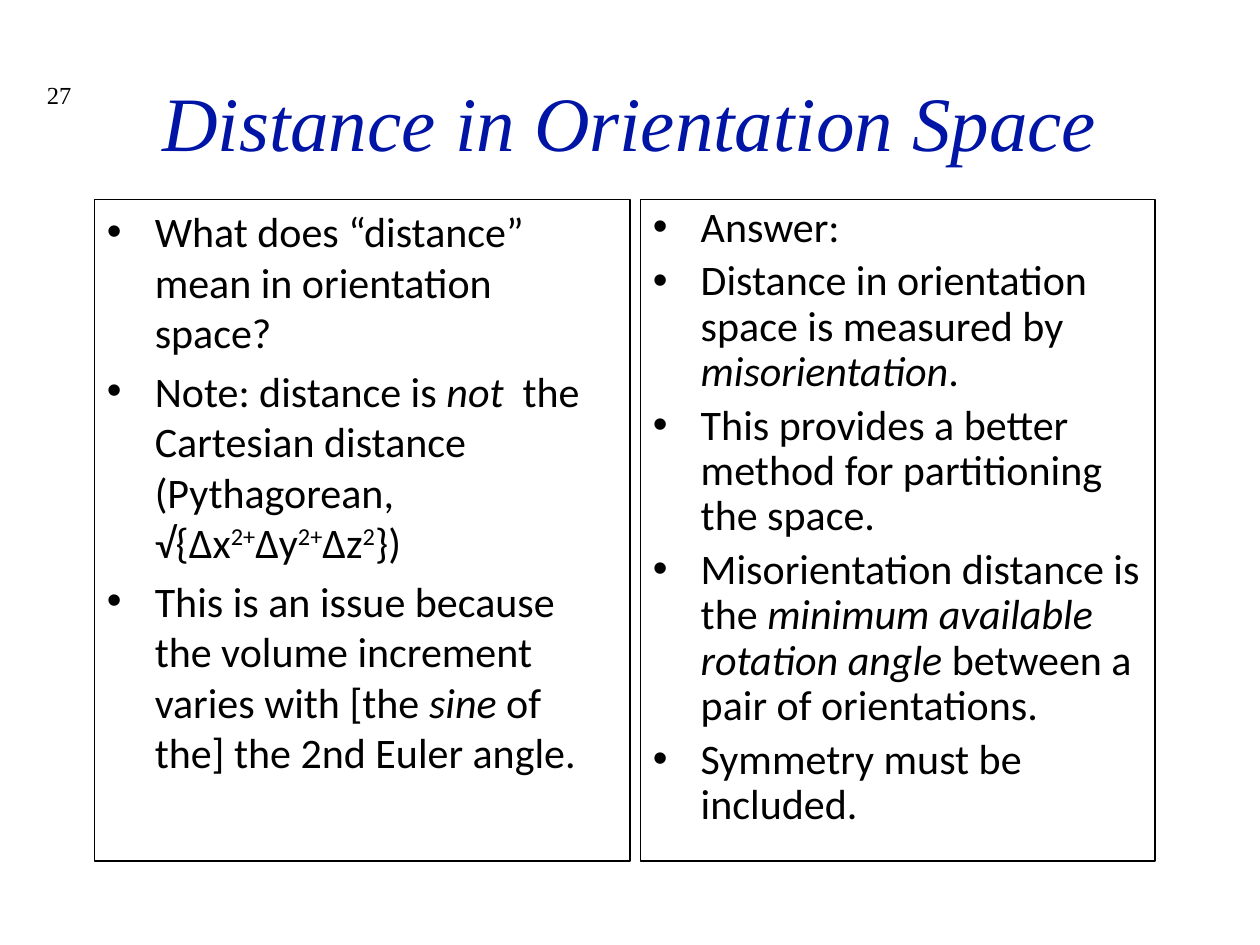
from dataclasses import dataclass

from lxml import etree
from pptx import Presentation
from pptx.dml.color import RGBColor
from pptx.enum.shapes import MSO_SHAPE
from pptx.enum.text import MSO_ANCHOR, MSO_AUTO_SIZE, PP_ALIGN
from pptx.oxml.ns import qn
from pptx.util import Inches, Pt

RECT = MSO_SHAPE.RECTANGLE
TOP, MIDDLE = MSO_ANCHOR.TOP, MSO_ANCHOR.MIDDLE
LEFT, CENTER, RIGHT = PP_ALIGN.LEFT, PP_ALIGN.CENTER, PP_ALIGN.RIGHT
NO_FIT = MSO_AUTO_SIZE.NONE

BLACK = RGBColor(0x00, 0x00, 0x00)
BLUE = RGBColor(0x00, 0x15, 0xA5)
SERIF, SANS = "Times New Roman", "Calibri"

# The grid has 120 columns and 90 rows, each 1/12 inch
UNIT = Inches(1 / 12)
COLS, ROWS = 120, 90
INDENT = Inches(0.38)

TITLE_FORMAT = {"name": SERIF, "size": Pt(44), "italic": True, "bold": False}
NUMBER_FORMAT = {"name": SERIF, "size": Pt(14)}
BODY_FORMAT = {"name": SANS, "size": Pt(24)}


@dataclass(frozen=True)
class Run:
    text: str
    italic: bool = False
    superscript: bool = False


@dataclass(frozen=True)
class Box:
    col: int
    row: int
    cols: int
    rows: int


@dataclass(frozen=True)
class Panel:
    box: Box
    line_spacing: float
    bullets: tuple[tuple[Run, ...], ...]


QUESTION = Panel(Box(9, 19, 51, 63), 1.0, (
    (Run("What does “distance” mean in orientation space?"),),
    (Run("Note: distance is "), Run("not ", italic=True),
     Run(" the Cartesian distance (Pythagorean, √{∆x"),
     Run("2+", superscript=True), Run("∆y"),
     Run("2+", superscript=True), Run("∆z"),
     Run("2", superscript=True), Run("})")),
    (Run("This is an issue because the volume increment varies with [the "),
     Run("sine", italic=True), Run(" of the] the 2nd Euler angle.")),
))
ANSWER = Panel(Box(61, 19, 49, 63), 0.9, (
    (Run("Answer:"),),
    (Run("Distance in orientation space is measured by "),
     Run("misorientation", italic=True), Run(".")),
    (Run("This provides a better method for partitioning the space."),),
    (Run("Misorientation distance is the "),
     Run("minimum available rotation angle ", italic=True),
     Run("between a pair of orientations.")),
    (Run("Symmetry must be included."),),
))


def place(sp, box: Box) -> None:
    sp.left, sp.top = UNIT * box.col, UNIT * box.row
    sp.width, sp.height = UNIT * box.cols, UNIT * box.rows


def set_frame(tf, anchor) -> None:
    tf.word_wrap, tf.auto_size, tf.vertical_anchor = True, NO_FIT, anchor


def add_run(p, text: str, formats: dict, color: RGBColor = BLACK):
    r = p.add_run()
    r.text = text
    for name, value in formats.items():
        setattr(r.font, name, value)
    r.font.color.rgb = color
    return r


def set_bullet(p) -> None:
    pPr = p._p.get_or_add_pPr()
    pPr.set("marL", str(INDENT))
    pPr.set("indent", str(-INDENT))
    etree.SubElement(pPr, qn("a:buFont"), typeface="Arial")
    etree.SubElement(pPr, qn("a:buChar"), char="•")


def draw_panel(s, panel: Panel) -> None:
    sp = s.shapes.add_shape(RECT, 0, 0, UNIT, UNIT)
    place(sp, panel.box)
    sp.shadow.inherit = False
    sp.fill.background()
    sp.line.color.rgb, sp.line.width = BLACK, Pt(0.75)
    tf = sp.text_frame
    set_frame(tf, TOP)
    for i, bullet in enumerate(panel.bullets):
        p = tf.add_paragraph() if i else tf.paragraphs[0]
        p.alignment = LEFT
        p.line_spacing = panel.line_spacing
        p.space_before = Pt(4.8)
        set_bullet(p)
        for run in bullet:
            r = add_run(p, run.text, BODY_FORMAT | {"italic": run.italic})
            if run.superscript:
                r.font._element.set("baseline", "30000")


def main() -> None:
    prs = Presentation()
    prs.slide_width, prs.slide_height = UNIT * COLS, UNIT * ROWS
    s = prs.slides.add_slide(prs.slide_layouts[5])

    # Slide number
    number = s.shapes.add_textbox(0, 0, UNIT, UNIT)
    place(number, Box(3, 7, 5, 6))
    set_frame(number.text_frame, TOP)
    p = number.text_frame.paragraphs[0]
    p.alignment = RIGHT
    add_run(p, "27", NUMBER_FORMAT)

    # Title
    title = s.shapes.title
    place(title, Box(9, 4, 102, 15))
    set_frame(title.text_frame, MIDDLE)
    p = title.text_frame.paragraphs[0]
    p.alignment = CENTER
    add_run(p, "Distance in Orientation Space", TITLE_FORMAT, BLUE)

    # Question and answer panels
    for panel in (QUESTION, ANSWER):
        draw_panel(s, panel)

    prs.save("out.pptx")


if __name__ == "__main__":
    main()
